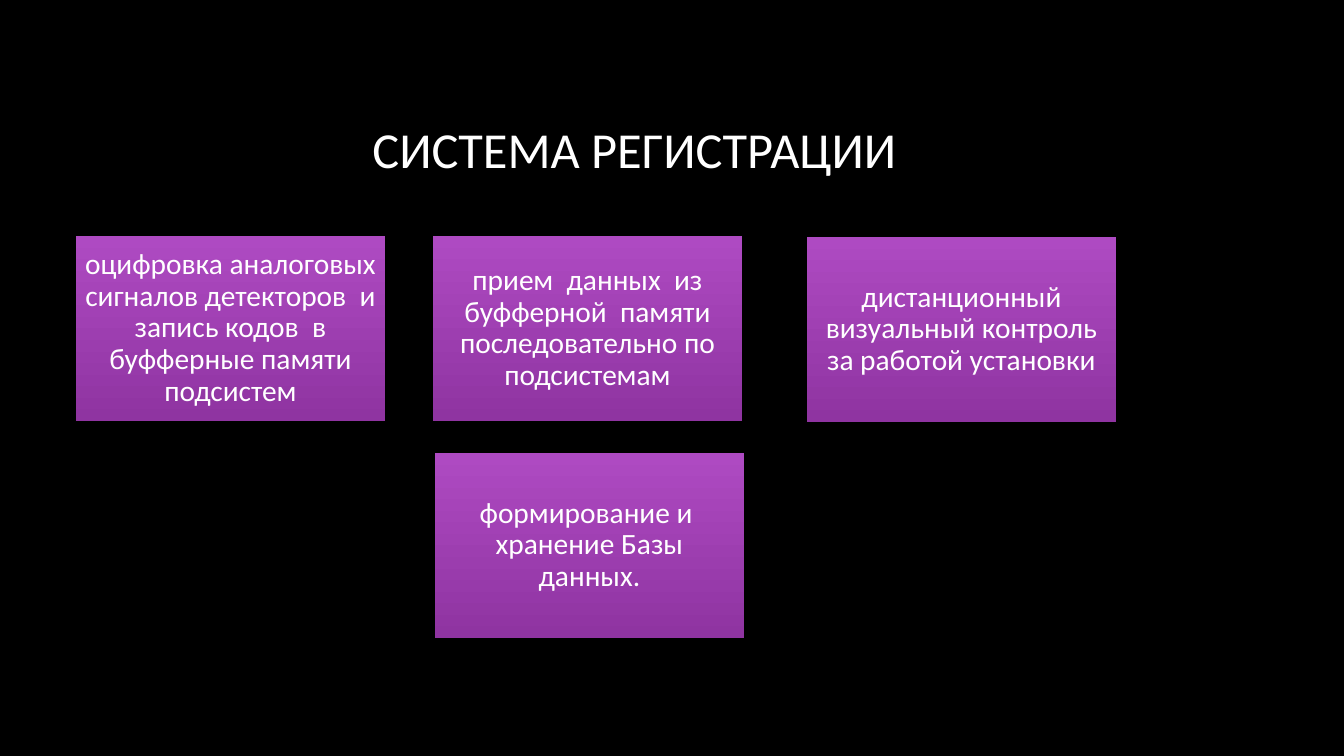
from pptx import Presentation
from pptx import util as u
from pptx.dml.color import RGBColor
from pptx.enum import shapes, text

TITLE = ("СИСТЕМА РЕГИСТРАЦИИ", 76, 68, 1117, 160)
TASKS = [
    ("оцифровка аналоговых сигналов детекторов  и запись кодов  в буфферные памяти подсистем", 76, 236),
    ("прием  данных  из буфферной  памяти последовательно по подсистемам", 433, 236),
    ("дистанционный визуальный контроль за работой установки", 807, 237),
    ("формирование и  хранение Базы данных.", 435, 453),
]
TASK_WIDTH, TASK_HEIGHT = 309, 185
SLIDE_WIDTH, SLIDE_HEIGHT = 1344, 756
INSET = 9

BLACK = RGBColor(0x00, 0x00, 0x00)
WHITE = RGBColor(0xFF, 0xFF, 0xFF)
VIOLET = RGBColor(0xAE, 0x4A, 0xC2)
PURPLE = RGBColor(0x8F, 0x34, 0xA1)

TITLE_FONT = {"name": "Calibri", "size": u.Pt(36)}
TASK_FONT = {"name": "Calibri", "size": u.Pt(21)}


def px(length):
    return u.Emu(round(length * 914400 / 100.8))


def apply(target, values):
    for name, value in values.items():
        setattr(target, name, value)


def write(box, wording, font, spacing):
    frame = box.text_frame
    margins = {f"margin_{side}": px(INSET) for side in ("left", "top", "right", "bottom")}
    apply(frame, {"word_wrap": True, "vertical_anchor": text.MSO_ANCHOR.MIDDLE, **margins})
    para = frame.paragraphs[0]
    apply(para, {"alignment": text.PP_ALIGN.CENTER, "line_spacing": spacing})
    span = para.add_run()
    span.text = wording
    apply(span.font, font)
    span.font.color.rgb = WHITE


def add_task(page, wording, left, top):
    box = page.shapes.add_shape(
        shapes.MSO_SHAPE.RECTANGLE, px(left), px(top), px(TASK_WIDTH), px(TASK_HEIGHT))
    box.shadow.inherit = False
    box.line.fill.background()
    box.fill.gradient()
    box.fill.gradient_angle = 270
    for stop, color, position in zip(box.fill.gradient_stops, (VIOLET, PURPLE), (0, 1)):
        stop.color.rgb = color
        stop.position = position
    write(box, wording, TASK_FONT, 0.9)


def main():
    deck = Presentation()
    apply(deck, {"slide_width": px(SLIDE_WIDTH), "slide_height": px(SLIDE_HEIGHT)})
    page = deck.slides.add_slide(deck.slide_layouts[6])
    page.background.fill.solid()
    page.background.fill.fore_color.rgb = BLACK

    heading, *area = TITLE
    title = page.shapes.add_textbox(*map(px, area))
    write(title, heading, TITLE_FONT, 1.0)
    for task in TASKS:
        add_task(page, *task)
    deck.save("out.pptx")


if __name__ == "__main__":
    main()
